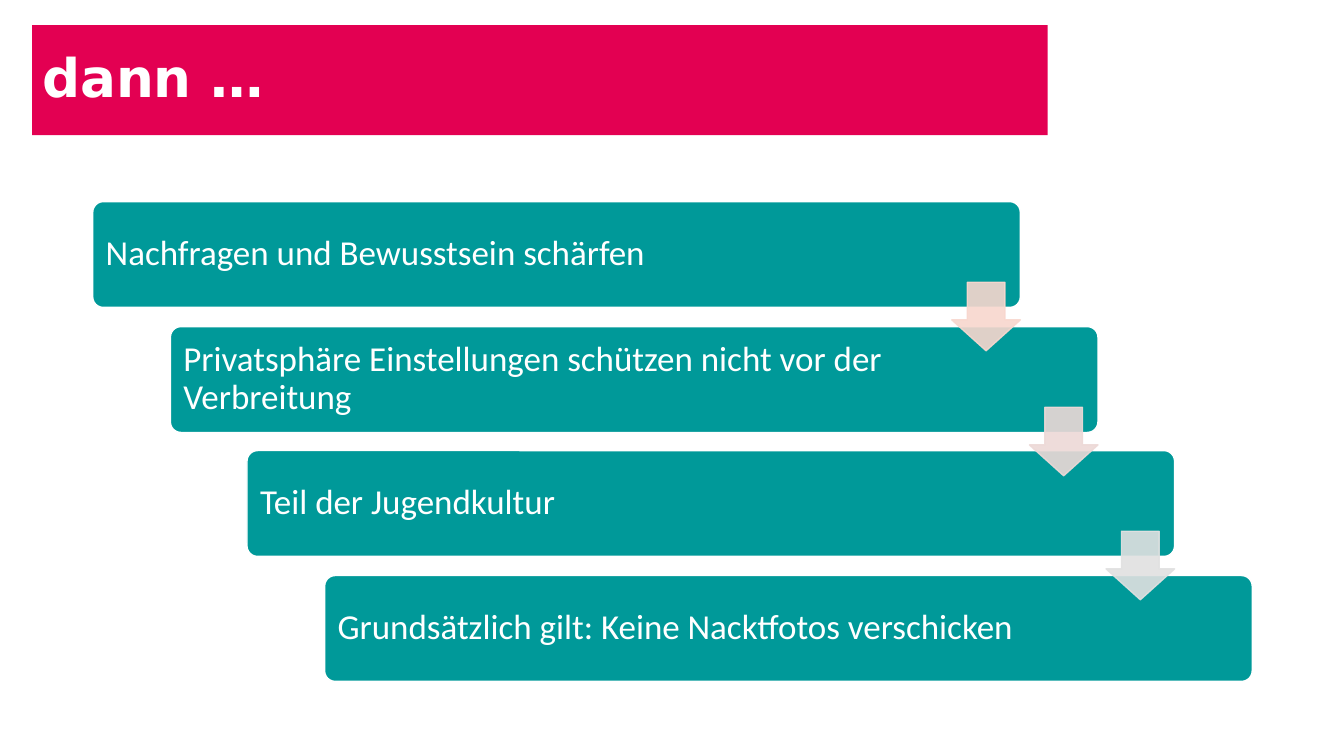
from lxml import etree
from pptx import Presentation
from pptx.dml.color import RGBColor
from pptx.enum.shapes import MSO_SHAPE
from pptx.enum.text import MSO_ANCHOR, PP_ALIGN
from pptx.oxml.ns import qn
from pptx.util import Pt

RECTANGLE = MSO_SHAPE.RECTANGLE
ROUNDED = MSO_SHAPE.ROUNDED_RECTANGLE
DOWN_ARROW = MSO_SHAPE.DOWN_ARROW
MIDDLE = MSO_ANCHOR.MIDDLE
LEFT = PP_ALIGN.LEFT

PX = 9144
THEME = {
    "title_fill": "E30052",
    "step_fill": "009999",
    "white": "FFFFFF",
    "arrow_fills": ["F8D7CE", "EDD9D7", "E1E1E1"],
    "title_font": "DejaVu Sans",
    "step_font": "Calibri",
    "title_size": 38,
    "step_size": 25,
}
STEPS = [
    "Nachfragen und Bewusstsein schärfen",
    "Privatsphäre Einstellungen schützen nicht vor der Verbreitung",
    "Teil der Jugendkultur",
    "Grundsätzlich gilt: Keine Nacktfotos verschicken",
]
FIRST_LEFT, FIRST_TOP = 92, 200
TOTAL_SHIFT, TOTAL_DROP = 230, 371
STEP_WIDTH, STEP_HEIGHT = 920, 105
ARROW_SIZE = 68


def add_box(page, kind, left, top, width, height, fill, outline=None):
    box = page.shapes.add_shape(kind, left * PX, top * PX, width * PX, height * PX)
    box.shadow.inherit = False
    box.fill.solid()
    box.fill.fore_color.rgb = RGBColor.from_string(fill)
    if outline:
        box.line.color.rgb = RGBColor.from_string(outline)
        box.line.width = Pt(1)
    else:
        box.line.fill.background()
    return box


def write_text(box, text, font, size, margins):
    frame = box.text_frame
    frame.word_wrap = True
    frame.vertical_anchor = MIDDLE
    frame.margin_left, frame.margin_top, frame.margin_right, frame.margin_bottom = [
        margin * PX for margin in margins
    ]
    frame.text = text
    para = frame.paragraphs[0]
    para.alignment = LEFT
    para.line_spacing = 0.9
    span = para.runs[0]
    span.font.name = font
    span.font.size = Pt(size)
    span.font.color.rgb = RGBColor.from_string(THEME["white"])
    return span


deck = Presentation()
deck.slide_width = 1333 * PX
deck.slide_height = 750 * PX
page = deck.slides.add_slide(deck.slide_layouts[6])

title = add_box(page, RECTANGLE, 32, 25, 1007, 109, THEME["title_fill"])
title_span = write_text(
    title, "dann …", THEME["title_font"], THEME["title_size"], (10, 5, 10, 5)
)
title_span.font.bold = True

last = len(STEPS) - 1
corners = [
    (FIRST_LEFT + round(index * TOTAL_SHIFT / last),
     FIRST_TOP + round(index * TOTAL_DROP / last))
    for index in range(len(STEPS))
]

for text, (left, top) in zip(STEPS, corners):
    step = add_box(
        page, ROUNDED, left, top, STEP_WIDTH, STEP_HEIGHT,
        THEME["step_fill"], THEME["white"],
    )
    step.adjustments[0] = 0.1
    write_text(step, text, THEME["step_font"], THEME["step_size"], (10, 10, 155, 10))

for color, (left, top) in zip(THEME["arrow_fills"], corners):
    arrow = add_box(
        page, DOWN_ARROW, left + STEP_WIDTH - ARROW_SIZE, top + 80,
        ARROW_SIZE, ARROW_SIZE, color, color,
    )
    arrow.adjustments[0] = 0.55
    arrow.adjustments[1] = 0.45
    for paint in arrow.element.spPr.iter(qn("a:srgbClr")):
        etree.SubElement(paint, qn("a:alpha")).set("val", "90000")

deck.save("out.pptx")
